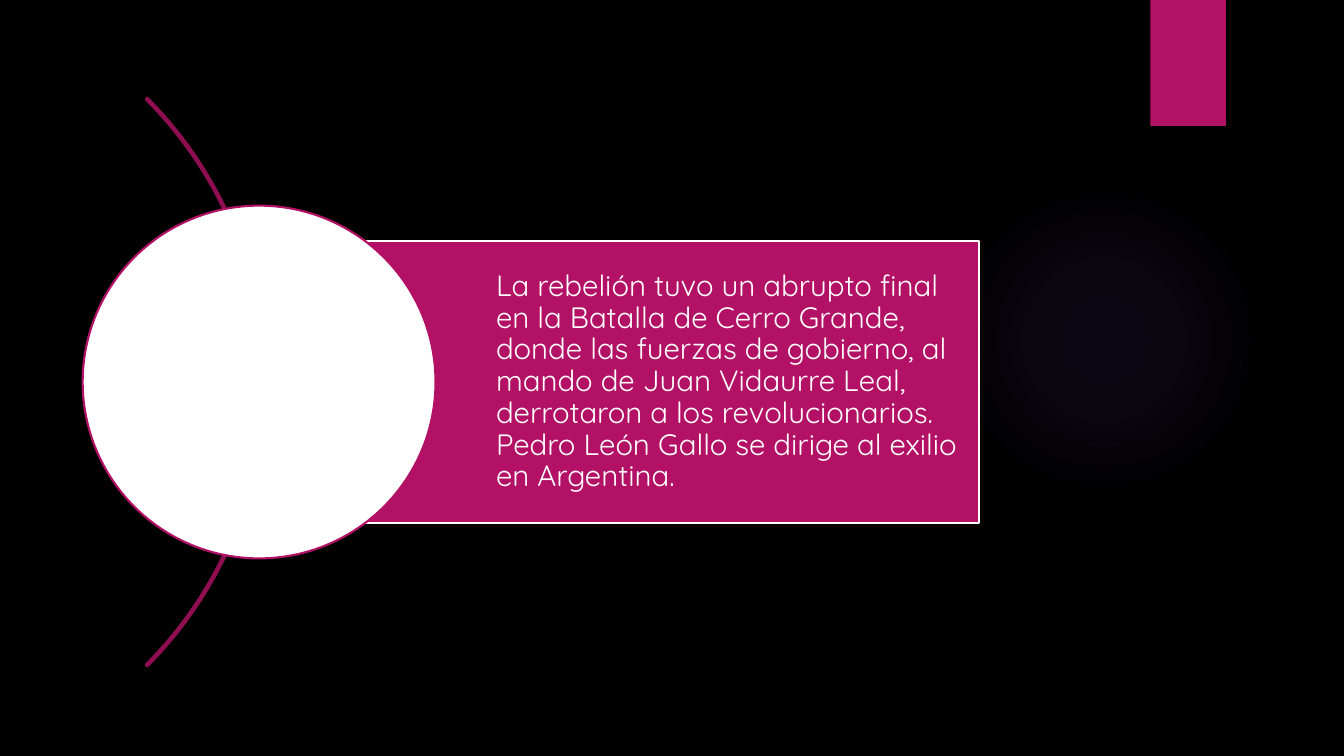
from dataclasses import dataclass

from pptx import Presentation
from pptx.dml.color import RGBColor
from pptx.enum.shapes import MSO_SHAPE
from pptx.enum.text import MSO_ANCHOR, PP_ALIGN
from pptx.oxml import parse_xml
from pptx.oxml.ns import nsdecls
from pptx.util import Pt

RECT, OVAL, ARC = MSO_SHAPE.RECTANGLE, MSO_SHAPE.OVAL, MSO_SHAPE.BLOCK_ARC
LEFT, MIDDLE = PP_ALIGN.LEFT, MSO_ANCHOR.MIDDLE
PX = 9144
BLACK, WHITE, MAGENTA, PLUM, VIOLET = "000000", "FFFFFF", "B31166", "8F0E52", "9B6BF2"
GLOW_STOPS = ((0, 7), (36, 6), (69, 0))
FONT = "Quicksand"
STORY = (
    "La rebelión tuvo un abrupto final en la Batalla de Cerro Grande, "
    "donde las fuerzas de gobierno, al mando de Juan Vidaurre Leal, "
    "derrotaron a los revolucionarios. Pedro León Gallo se dirige al exilio en Argentina."
)


@dataclass(frozen=True)
class Figure:
    kind: MSO_SHAPE
    x: int
    y: int
    w: int
    h: int
    fill: str = ""
    line: str = ""
    adjustments: tuple[float, ...] = ()


GLOW = Figure(OVAL, 941, 183, 308, 308)
TAB = Figure(RECT, 1141, 0, 75, 125, MAGENTA)
ORBIT = Figure(ARC, -535, -20, 798, 798, line=PLUM, adjustments=(189, 27, 0.003))
PANEL = Figure(RECT, 257, 239, 714, 280, MAGENTA, WHITE)
DISC = Figure(OVAL, 82, 204, 350, 350, WHITE, MAGENTA)


def px(n: int) -> int:
    return n * PX


def color(value: str) -> RGBColor:
    return RGBColor.from_string(value)


def draw(slide, fig: Figure):
    s = slide.shapes.add_shape(fig.kind, px(fig.x), px(fig.y), px(fig.w), px(fig.h))
    s.shadow.inherit = False
    for i, value in enumerate(fig.adjustments):
        s.adjustments[i] = value
    if fig.fill:
        s.fill.solid()
        s.fill.fore_color.rgb = color(fig.fill)
    else:
        s.fill.background()
    if fig.line:
        s.line.color.rgb = color(fig.line)
        s.line.width = Pt(1.5)
    else:
        s.line.fill.background()
    return s


def add_glow(s) -> None:
    stops = "".join(
        f'<a:gs pos="{pos * 1000}"><a:srgbClr val="{VIOLET}">'
        f'<a:alpha val="{alpha * 1000}"/></a:srgbClr></a:gs>'
        for pos, alpha in GLOW_STOPS
    )
    grad = parse_xml(
        f'<a:gradFill {nsdecls("a")}><a:gsLst>{stops}</a:gsLst><a:path path="circle">'
        '<a:fillToRect l="50000" t="50000" r="50000" b="50000"/></a:path></a:gradFill>'
    )
    sp_pr = s._element.spPr
    sp_pr.replace(sp_pr.find("{*}noFill"), grad)


def write_story(s) -> None:
    tf = s.text_frame
    tf.word_wrap = True
    tf.vertical_anchor = MIDDLE
    tf.margin_left = px(235)
    tf.margin_top = tf.margin_right = tf.margin_bottom = px(6)
    tf.text = STORY
    p = tf.paragraphs[0]
    p.alignment = LEFT
    p.line_spacing = 0.9
    r = p.runs[0]
    r.font.name = FONT
    r.font.size = Pt(21)
    r.font.color.rgb = color(WHITE)


def main() -> None:
    """Build the slide about the end of the rebellion and save it."""
    prs = Presentation()
    prs.slide_width, prs.slide_height = px(1333), px(750)
    slide = prs.slides.add_slide(prs.slide_layouts[6])
    slide.background.fill.solid()
    slide.background.fill.fore_color.rgb = color(BLACK)
    add_glow(draw(slide, GLOW))
    draw(slide, TAB)
    draw(slide, ORBIT)
    write_story(draw(slide, PANEL))
    draw(slide, DISC)
    prs.save("out.pptx")


if __name__ == "__main__":
    main()
